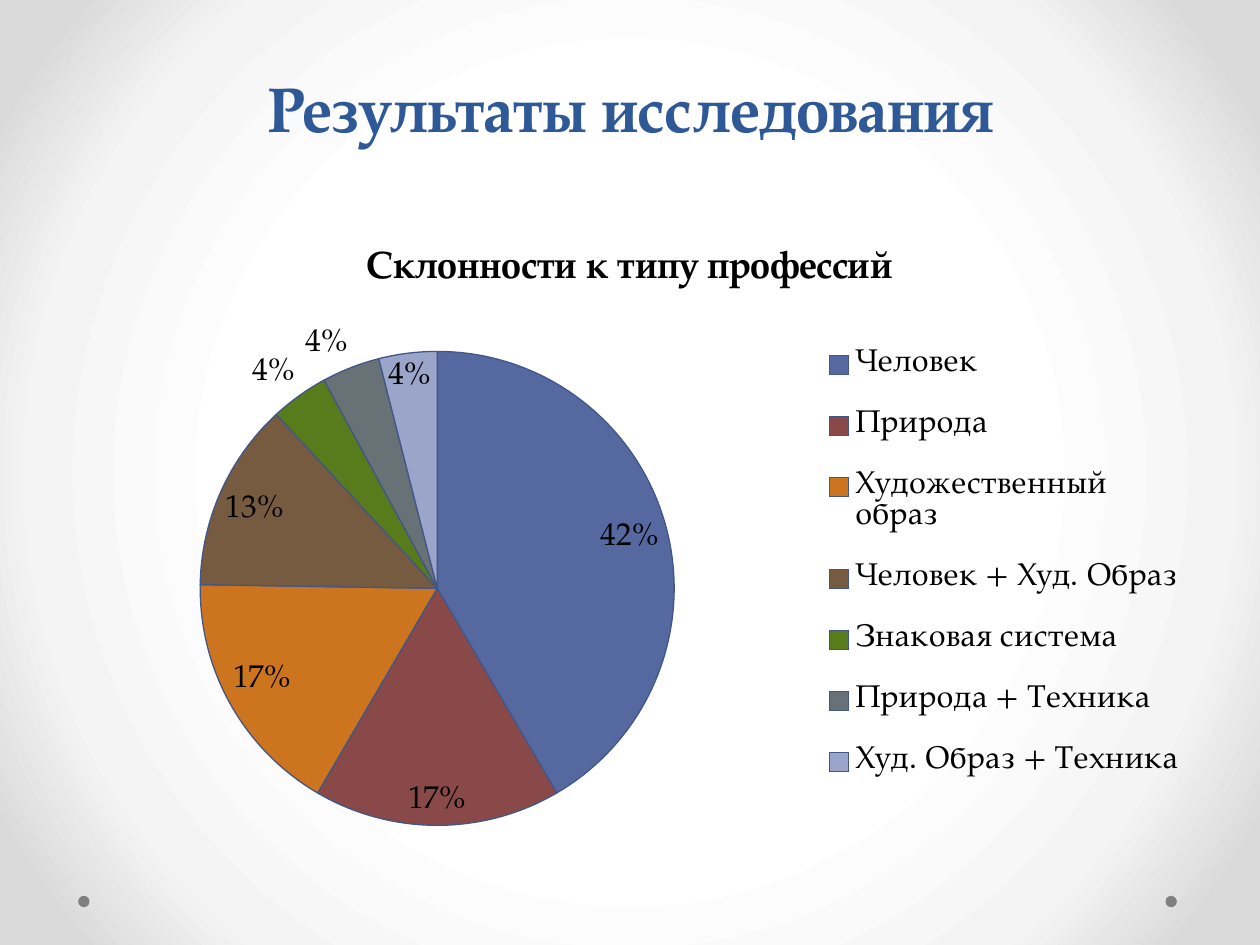
from dataclasses import dataclass

import lxml.etree
import pptx
import pptx.chart.data
import pptx.dml.color
import pptx.enum.chart
import pptx.enum.shapes
import pptx.enum.text
import pptx.oxml
import pptx.oxml.ns
import pptx.util

Inches = pptx.util.Inches
Pt = pptx.util.Pt
qn = pptx.oxml.ns.qn


@dataclass(frozen=True)
class Theme:
    font: str = "TeX Gyre Pagella"
    title: str = "2F5897"
    text: str = "000000"
    dot: str = "808080"
    outline: str = "425687"
    background: tuple = ((50, "FFFFFF"), (76, "F4F4F4"), (92, "DADADA"))
    title_size: float = 36
    title_spacing: float = 58
    chart_title_size: float = 21.6
    chart_size: float = 18


THEME = Theme()
CHART_TITLE = "Склонности к типу профессий"
PROFESSIONS = (
    ("Человек", 42, "5569A0"),
    ("Природа", 17, "8A4949"),
    ("Художественный образ", 17, "CD751E"),
    ("Человек + Худ. Образ", 13, "765B40"),
    ("Знаковая система", 4, "587B1B"),
    ("Природа + Техника", 4, "687276"),
    ("Худ. Образ + Техника", 4, "9BA5CA"),
)


def rgb(value):
    return pptx.dml.color.RGBColor.from_string(value)


def set_font(font, size, color=THEME.text, bold=False):
    font.name = THEME.font
    font.size = Pt(size)
    font.bold = bold
    font.color.rgb = rgb(color)


def write_text(tf, text, spacing=None, **style):
    p = tf.paragraphs[0]
    p.alignment = pptx.enum.text.PP_ALIGN.CENTER
    if spacing:
        p.line_spacing = Pt(spacing)
    r = p.add_run()
    r.text = text
    set_font(r.font, **style)


def set_background(s):
    fill = s.background.fill
    fill.gradient()
    grad = next(s.element.iter(qn("a:gradFill")))
    for child in list(grad):
        grad.remove(child)
    stops = lxml.etree.SubElement(grad, qn("a:gsLst"))
    for position, color in THEME.background:
        stop = lxml.etree.SubElement(stops, qn("a:gs"), pos=str(position * 1000))
        lxml.etree.SubElement(stop, qn("a:srgbClr"), val=color)
    shade = lxml.etree.SubElement(grad, qn("a:path"), path="circle")
    lxml.etree.SubElement(
        shade, qn("a:fillToRect"), {side: "50000" for side in "ltrb"}
    )


def add_dot(s, left):
    sp = s.shapes.add_shape(
        pptx.enum.shapes.MSO_SHAPE.OVAL,
        Inches(left), Inches(7.11), Inches(0.09), Inches(0.09),
    )
    sp.shadow.inherit = False
    sp.fill.solid()
    sp.fill.fore_color.rgb = rgb(THEME.dot)
    sp.line.fill.background()


def add_title(s, text):
    sp = s.shapes.add_textbox(Inches(0.51), Inches(0.44), Inches(9), Inches(0.76))
    tf = sp.text_frame
    tf.word_wrap = True
    tf.vertical_anchor = pptx.enum.text.MSO_ANCHOR.BOTTOM
    write_text(tf, text, spacing=THEME.title_spacing, size=THEME.title_size,
               color=THEME.title, bold=True)


def set_layout(element, x, y, w, h, inner=False):
    for old in element.findall(qn("c:layout")):
        element.remove(old)
    layout = pptx.oxml.parse_xml(
        f'<c:layout {pptx.oxml.ns.nsdecls("c")}><c:manualLayout/></c:layout>'
    )
    settings = [("layoutTarget", "inner")] if inner else []
    settings += [("xMode", "edge"), ("yMode", "edge"),
                 ("x", x), ("y", y), ("w", w), ("h", h)]
    for tag, value in settings:
        lxml.etree.SubElement(layout[0], qn(f"c:{tag}"), val=str(value))
    if inner:
        element.insert(0, layout)
    else:
        element.find(qn("c:legendPos")).addnext(layout)


def add_pie(s):
    data = pptx.chart.data.CategoryChartData()
    data.categories = [name for name, _, _ in PROFESSIONS]
    data.add_series(CHART_TITLE, [value for _, value, _ in PROFESSIONS])
    chart = s.shapes.add_chart(
        pptx.enum.chart.XL_CHART_TYPE.PIE,
        Inches(0.5), Inches(1.75), Inches(9), Inches(4.95), data,
    ).chart
    set_font(chart.font, THEME.chart_size)
    chart.has_title = True
    write_text(chart.chart_title.text_frame, CHART_TITLE,
               size=THEME.chart_title_size, bold=True)

    chart.has_legend = True
    legend = chart.legend
    legend.position = pptx.enum.chart.XL_LEGEND_POSITION.RIGHT
    legend.include_in_layout = False
    set_font(legend.font, THEME.chart_size)

    plot = chart.plots[0]
    plot.vary_by_categories = True
    plot.has_data_labels = True
    labels = plot.data_labels
    labels.show_percentage = True
    labels.show_value = False
    labels.number_format = "0%"
    labels.number_format_is_linked = False
    labels.position = pptx.enum.chart.XL_LABEL_POSITION.BEST_FIT
    set_font(labels.font, THEME.chart_size)

    for i, (_, _, color) in enumerate(PROFESSIONS):
        fmt = plot.series[0].points[i].format
        fmt.fill.solid()
        fmt.fill.fore_color.rgb = rgb(color)
        fmt.line.color.rgb = rgb(THEME.outline)
        fmt.line.width = Pt(0.75)

    area = next(chart.element.iter(qn("c:plotArea")))
    set_layout(area, 0.12, 0.21, 0.42, 0.76, inner=True)
    set_layout(next(chart.element.iter(qn("c:legend"))), 0.67, 0.16, 0.32, 0.78)


def main():
    prs = pptx.Presentation()
    prs.slide_width, prs.slide_height = Inches(10), Inches(7.5)
    s = prs.slides.add_slide(prs.slide_layouts[6])
    set_background(s)
    for left in (9.25, 0.62):
        add_dot(s, left)
    add_title(s, "Результаты исследования")
    add_pie(s)
    prs.save("out.pptx")


if __name__ == "__main__":
    main()
